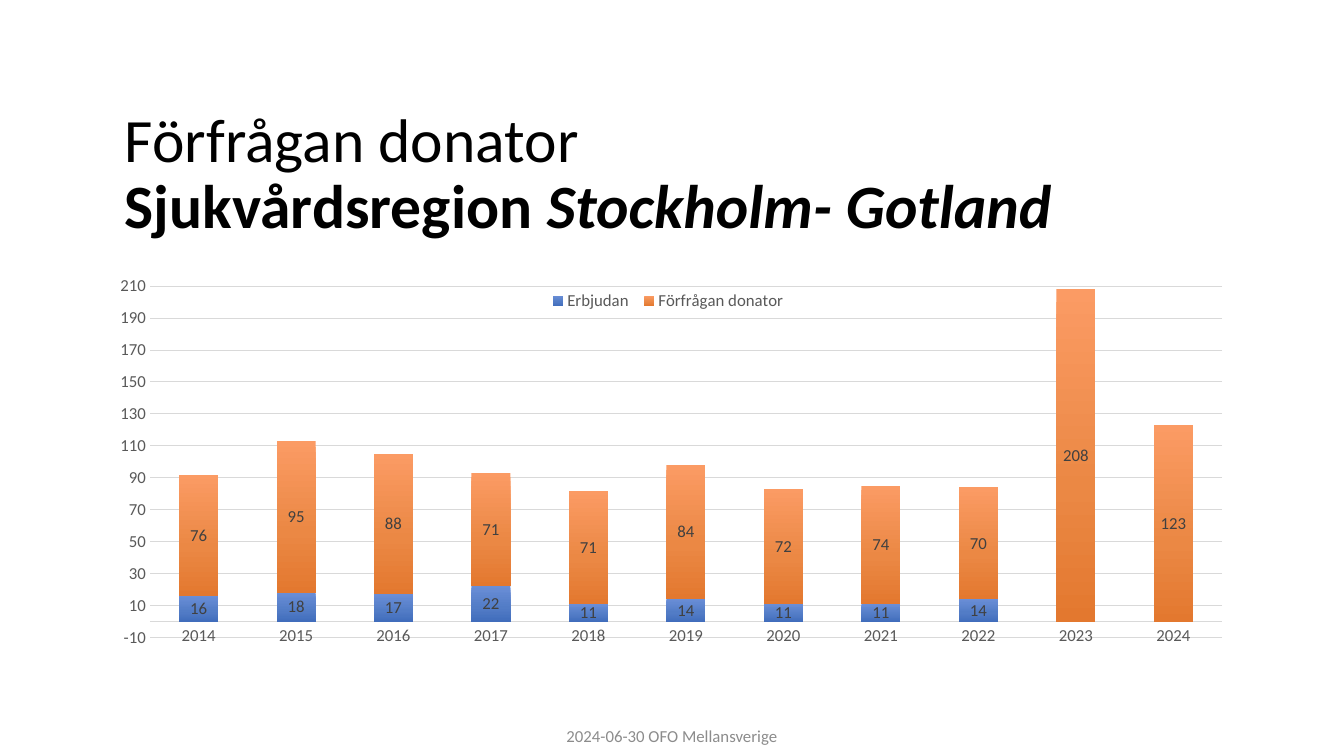
from copy import deepcopy

from pptx import Presentation
from pptx.chart.data import CategoryChartData as Data
from pptx.dml.color import RGBColor as RGB
from pptx.enum.chart import XL_CHART_TYPE as Kind
from pptx.enum.chart import XL_LABEL_POSITION as Spot
from pptx.enum.chart import XL_LEGEND_POSITION as Side
from pptx.enum.chart import XL_TICK_MARK as Tick
from pptx.enum.text import MSO_ANCHOR as Anchor
from pptx.enum.text import MSO_AUTO_SIZE as Fit
from pptx.enum.text import PP_ALIGN as Align
from pptx.oxml import parse_xml
from pptx.oxml.ns import nsdecls
from pptx.oxml.ns import qn
from pptx.util import Pt

BLACK = RGB(0x00, 0x00, 0x00)
DARK = RGB(0x40, 0x40, 0x40)
GREY = RGB(0x59, 0x59, 0x59)
PALE = RGB(0x8C, 0x8C, 0x8C)
RULE = RGB(0xD9, 0xD9, 0xD9)
BLUES = (RGB(0x6A, 0x8E, 0xD7), RGB(0x52, 0x7C, 0xC6), RGB(0x41, 0x6D, 0xBC))
REDS = (RGB(0xFB, 0x9B, 0x64), RGB(0xEB, 0x88, 0x44), RGB(0xE3, 0x78, 0x2F))
STOPS = (0, 0.6, 1)
FACE = "Calibri"
YEARS = [str(year) for year in range(2014, 2025)]
ROWS = (
    ("Erbjudan", (16, 18, 17, 22, 11, 14, 11, 11, 14, None, None), BLUES),
    ("Förfrågan donator", (76, 95, 88, 71, 71, 84, 72, 74, 70, 208, 123), REDS),
)


def apply(item, form):
    """Set each attribute of the item from the format values."""
    for key, val in form.items():
        setattr(item, key, val)


def style(font, size, tint, **form):
    """Give a font its face, size, colour and other values."""
    apply(font, dict(name=FACE, size=Pt(size), **form))
    font.color.rgb = tint


def place(shape, box):
    """Move the shape to a box of points."""
    apply(shape, dict(zip(("left", "top", "width", "height"), map(Pt, box))))


def head(slide, box):
    """Fill the title with a plain line and a bold line."""
    title = slide.shapes.title
    place(title, box)
    frame = title.text_frame
    apply(frame, dict(word_wrap=True, auto_size=Fit.NONE, vertical_anchor=Anchor.MIDDLE))
    para = frame.paragraphs[0]
    apply(para, dict(alignment=Align.LEFT, line_spacing=0.9))
    for text, bold, slant in (
        ("Förfrågan donator ", False, False),
        ("Sjukvårdsregion ", True, False),
        ("Stockholm- Gotland", True, True),
    ):
        run = para.add_run()
        run.text = text
        style(run.font, 44, BLACK, bold=bold, italic=slant)
        if not bold:
            para.add_line_break()


def foot(slide, box):
    """Write the centred date and source line."""
    frame = slide.shapes.add_textbox(*map(Pt, box)).text_frame
    apply(frame, dict(word_wrap=True, vertical_anchor=Anchor.MIDDLE))
    para = frame.paragraphs[0]
    apply(para, dict(alignment=Align.CENTER, space_after=Pt(6)))
    run = para.add_run()
    run.text = "2024-06-30 OFO Mellansverige"
    style(run.font, 12, PALE)


def layout(part, inner, **spots):
    """Return a manual chart layout with the given fractions."""
    target = '<c:layoutTarget val="inner"/>' if inner else ""
    modes = "".join(f'<c:{key}Mode val="edge"/>' for key in "xy")
    sizes = "".join(f'<c:{key} val="{val}"/>' for key, val in spots.items())
    for old in part.findall(qn("c:layout")):
        part.remove(old)
    return parse_xml(
        f'<c:layout {nsdecls("c")}><c:manualLayout>{target}{modes}{sizes}'
        "</c:manualLayout></c:layout>"
    )


def shade(bar, tints):
    """Fill a series with a downward blend of three colours."""
    fill = bar.format.fill
    fill.gradient()
    fill.gradient_angle = 270
    stops = bar._element.find(".//" + qn("a:gsLst"))
    stops.append(deepcopy(stops[0]))
    for stop, spot, tint in zip(fill.gradient_stops, STOPS, tints):
        stop.position = spot
        stop.color.rgb = tint


def axes(chart):
    """Format the year axis and the count axis."""
    years, count = chart.category_axis, chart.value_axis
    for axis in (years, count):
        apply(axis, dict(major_tick_mark=Tick.NONE, minor_tick_mark=Tick.NONE))
        style(axis.tick_labels.font, 12, GREY)
    years.format.line.color.rgb = RULE
    years.format.line.width = Pt(1)
    apply(count, dict(minimum_scale=-10, maximum_scale=210, major_unit=20))
    count.format.line.fill.background()
    grid = count.major_gridlines.format.line
    grid.color.rgb = RULE
    grid.width = Pt(0.75)


def graph(slide, box):
    """Draw the stacked columns with labels and legend."""
    data = Data()
    data.categories = YEARS
    for name, vals, _ in ROWS:
        data.add_series(name, vals)
    chart = slide.shapes.add_chart(Kind.COLUMN_STACKED, *map(Pt, box), data).chart
    style(chart.font, 10, BLACK)
    apply(chart, dict(has_title=False, has_legend=True))
    axes(chart)
    plot = chart.plots[0]
    apply(plot, dict(gap_width=150, overlap=100, vary_by_categories=False))
    for bar, (_, _, tints) in zip(plot.series, ROWS):
        shade(bar, tints)
        tags = bar.data_labels
        apply(tags, dict(show_value=True, position=Spot.CENTER))
        style(tags.font, 12, DARK)
    legend = chart.legend
    apply(legend, dict(position=Side.TOP, include_in_layout=False))
    style(legend.font, 12, GREY)
    part = legend._element
    spot = layout(part, False, x=0.39, y=0.03, w=0.22, h=0.06)
    part.find(qn("c:legendPos")).addnext(spot)
    area = chart._chartSpace.chart.plotArea
    area.insert(0, layout(area, True, x=0.044, y=0.024, w=0.943, h=0.857))


def main():
    """Build and save the slide."""
    deck = Presentation()
    apply(deck, dict(slide_width=Pt(960), slide_height=Pt(540)))
    slide = deck.slides.add_slide(deck.slide_layouts[5])
    head(slide, (82, 64, 801.5, 122.5))
    graph(slide, (71.3, 197.3, 812.2, 293))
    foot(slide, (318, 511, 324, 29))
    deck.save("out.pptx")


if __name__ == "__main__":
    main()
